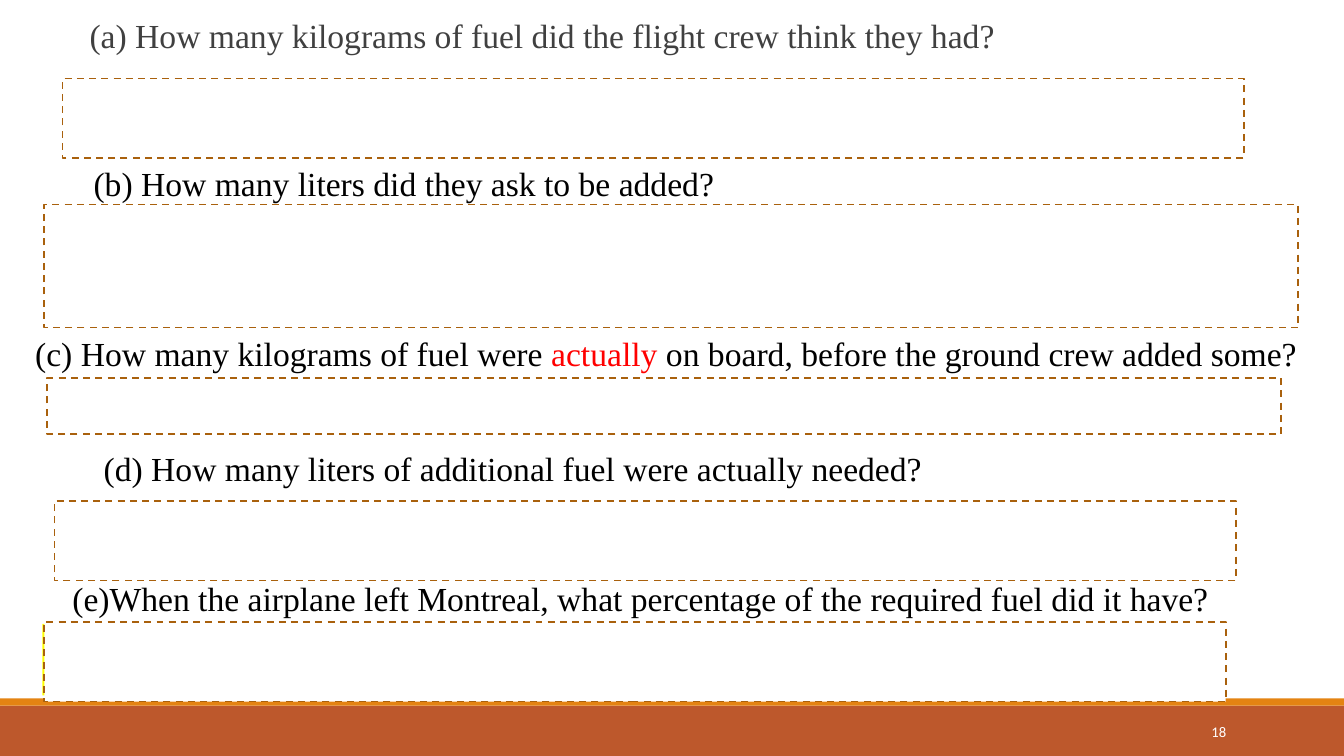
from pptx import Presentation
from pptx.dml.color import RGBColor as RGB
from pptx.enum.dml import MSO_LINE_DASH_STYLE as Dash
from pptx.enum.shapes import MSO_SHAPE as Preset
from pptx.enum.text import MSO_ANCHOR as Anchor, PP_ALIGN as Align
from pptx.util import Inches, Pt

THEME = {
    "footer": RGB.from_string("BD582C"),
    "stripe": RGB.from_string("E48312"),
    "answer_line": RGB.from_string("A9610D"),
    "highlight": RGB.from_string("FFFF00"),
    "white": RGB.from_string("FFFFFF"),
    "grey": RGB.from_string("404040"),
    "black": RGB.from_string("000000"),
    "red": RGB.from_string("FF0000"),
    "question_font": {"name": "Times New Roman", "size": Pt(24)},
    "number_font": {"name": "Calibri", "size": Pt(10.5)},
    "answer_border": {"width": Pt(1.25), "dash_style": Dash.DASH},
}
COLS, ROWS = 160, 90

deck = Presentation()
deck.slide_width, deck.slide_height = Inches(13.33), Inches(7.5)
cell_w, cell_h = deck.slide_width / COLS, deck.slide_height / ROWS
slide = deck.slides.add_slide(deck.slide_layouts[6])


def add_block(col, row, cols, rows, fill):
    block = slide.shapes.add_shape(
        Preset.RECTANGLE, round(col * cell_w), round(row * cell_h),
        round(cols * cell_w), round(rows * cell_h))
    block.shadow.inherit = False
    block.fill.solid()
    block.fill.fore_color.rgb = THEME[fill]
    block.line.fill.background()
    return block


def add_words(col, row, cols, rows, runs, font):
    box = slide.shapes.add_textbox(
        round(col * cell_w), round(row * cell_h),
        round(cols * cell_w), round(rows * cell_h))
    box.text_frame.word_wrap = True
    paragraph = box.text_frame.paragraphs[0]
    for words, colour in runs:
        run = paragraph.add_run()
        run.text = words
        for key, value in THEME[font].items():
            setattr(run.font, key, value)
        run.font.color.rgb = THEME[colour]
    return box.text_frame


add_block(0, 84, COLS, 6, "footer")
add_block(0, 83.16, COLS, 0.84, "stripe")

page_number = add_words(130, 84.72, 17.16, 4.8, [("18", "white")], "number_font")
page_number.vertical_anchor = Anchor.MIDDLE
page_number.paragraphs[0].alignment = Align.RIGHT

questions = [
    (9.48, 1.68, 139.44, 0.9, [
        ("(a) How many kilograms of fuel did the flight crew think they had?", "grey")]),
    (9.96, 18.84, 82.8, 1.0, [
        ("(b) How many liters did they ask to be added?", "black")]),
    (3, 39, 153.72, 1.0, [
        ("(c) How many kilograms of fuel were ", "black"),
        ("actually", "red"),
        (" on board, before the ground crew added some?", "black")]),
    (11.16, 52.68, 102, 1.0, [
        ("(d) How many liters of additional fuel were actually needed?", "black")]),
    (7.44, 68.16, 144.24, 1.0, [
        ("(e)When the airplane left Montreal, what percentage of the required fuel did it have?",
         "black")]),
]
for col, row, cols, spacing, runs in questions:
    question = add_words(col, row, cols, 6, runs, "question_font")
    question.paragraphs[0].line_spacing = spacing

add_block(5.04, 74.28, 138.72, 8.52, "highlight")

answers = [
    (7.44, 9.36, 140.64, 9.48),
    (5.28, 24.36, 149.28, 14.64),
    (5.64, 45, 146.88, 6.72),
    (6.48, 59.64, 140.64, 9.48),
    (5.28, 74.04, 140.64, 9.48),
]
for place in answers:
    answer = add_block(*place, "white")
    answer.line.color.rgb = THEME["answer_line"]
    for key, value in THEME["answer_border"].items():
        setattr(answer.line, key, value)

deck.save("out.pptx")
